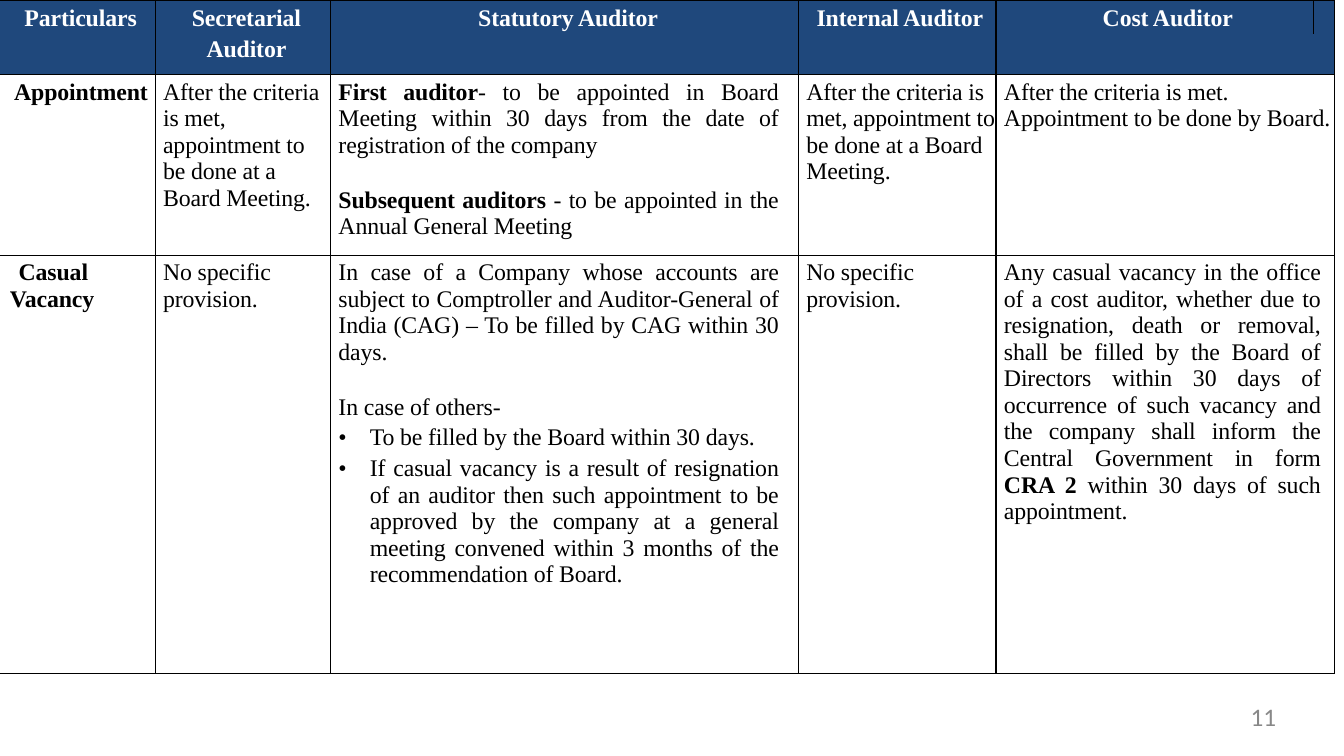
from dataclasses import dataclass
from lxml.etree import SubElement
from pptx import Presentation
from pptx.dml.color import RGBColor
from pptx.enum.text import PP_ALIGN
from pptx.oxml.ns import qn
from pptx.util import Cm, Pt

NAVY, WHITE, BLACK, GREY = "1F487C", "FFFFFF", "000000", "888888"
CENTER, JUSTIFY, LEFT = PP_ALIGN.CENTER, PP_ALIGN.JUSTIFY, PP_ALIGN.LEFT
COLUMN_WIDTHS = [3.94, 4.42, 11.79, 4.98, 8, 0.53]
ROW_HEIGHTS = [0.84, 1.02, 4.55, 10.54]
HEADER_ROWS = 2


@dataclass
class Para:
    spans: list
    align: PP_ALIGN = LEFT
    indent: float = 0.2
    right: float = 0
    before: float = 0
    line: float = 0
    bullet: bool = False


def plain(text, **layout):
    return Para([(text, False)], **layout)


def strong(text, **layout):
    return Para([(text, True)], **layout)


def heading(text, align=CENTER, indent=0.18):
    return [strong(text, align=align, indent=indent, line=20.1)]


def statutory(*spans, **layout):
    return Para(list(spans), align=JUSTIFY, right=0.5, **layout)


def bullet(text):
    return statutory((text, False), indent=0.99, before=3, bullet=True)


CELLS = {
    (0, 0): heading("Particulars"),
    (0, 1): heading("Secretarial"),
    (0, 2): heading("Statutory Auditor"),
    (0, 3): heading("Internal Auditor", LEFT, 0.46),
    (0, 4): heading("Cost Auditor", LEFT, 2.69),
    (1, 1): heading("Auditor"),
    (2, 0): [strong("Appointment", align=CENTER)],
    (2, 1): [plain("After the criteria is met, appointment to be done at a Board Meeting.")],
    (2, 2): [
        statutory(("First auditor", True),
                  ("- to be appointed in Board Meeting within 30 days from the date of "
                   "registration of the company", False)),
        statutory(("Subsequent auditors ", True),
                  ("- to be appointed in the Annual General Meeting", False), before=20.3),
    ],
    (2, 3): [plain("After the criteria is met, appointment to be done at a Board Meeting.")],
    (2, 4): [plain("After the criteria is met. Appointment to be done by Board.")],
    (3, 0): [strong("Casual", indent=0.5), strong("Vacancy", indent=0.28)],
    (3, 1): [plain("No specific"), plain("provision.")],
    (3, 2): [
        statutory(("In case of a Company whose accounts are subject to Comptroller and "
                   "Auditor-General of India (CAG) – To be filled by CAG within 30 days.", False)),
        statutory(("In case of others-", False), before=20.3),
        bullet("To be filled by the Board within 30 days."),
        bullet("If casual vacancy is a result of resignation of an auditor then such "
               "appointment to be approved by the company at a general meeting convened "
               "within 3 months of the recommendation of Board."),
    ],
    (3, 3): [plain("No specific"), plain("provision.")],
    (3, 4): [Para([
        ("Any casual vacancy in the office of a cost auditor, whether due to resignation, "
         "death or removal, shall be filled by the Board of Directors within 30 days of "
         "occurrence of such vacancy and the company shall inform the Central Government "
         "in form ", False),
        ("CRA 2 ", True),
        ("within 30 days of such appointment.", False)], align=JUSTIFY, right=0.35)],
}


def color(value):
    return RGBColor.from_string(value)


def style_span(span, font, size, value, bold=False):
    span.font.name = font
    span.font.size = Pt(size)
    span.font.bold = bold
    span.font.color.rgb = color(value)
    span.font._element.set("spc", "-10")


def clear_margins(target, top):
    target.margin_left = target.margin_right = target.margin_bottom = 0
    target.margin_top = Cm(top)


def write_paragraph(paragraph, para, value):
    paragraph.alignment = para.align
    properties = paragraph._p.get_or_add_pPr()
    properties.set("marL", str(Cm(para.indent)))
    properties.set("marR", str(Cm(para.right)))
    properties.set("indent", str(Cm(-0.79 if para.bullet else 0)))
    if para.before:
        paragraph.space_before = Pt(para.before)
    if para.line:
        paragraph.line_spacing = Pt(para.line)
    if para.bullet:
        SubElement(properties, qn("a:buFont"), typeface="Times New Roman")
        SubElement(properties, qn("a:buChar"), char="•")
        tabs = SubElement(properties, qn("a:tabLst"))
        SubElement(tabs, qn("a:tab"), pos=str(Cm(para.indent)), algn="l")
    for text, bold in para.spans:
        span = paragraph.add_run()
        span.text = text
        style_span(span, "Times New Roman", 17, value, bold)


def set_borders(cell, hidden):
    properties = cell._tc.get_or_add_tcPr()
    for side in "LRTB":
        line = SubElement(properties, qn("a:ln" + side), w=str(Pt(1)))
        if side == hidden:
            SubElement(line, qn("a:noFill"))
        else:
            fill = SubElement(line, qn("a:solidFill"))
            SubElement(fill, qn("a:srgbClr"), val=BLACK)


def add_auditor_table(page, left, top):
    frame = page.shapes.add_table(len(ROW_HEIGHTS), len(COLUMN_WIDTHS), Cm(left), Cm(top),
                                  Cm(sum(COLUMN_WIDTHS)), Cm(sum(ROW_HEIGHTS)))
    table = frame.table
    table.first_row = table.horz_banding = False
    for column, width in zip(table.columns, COLUMN_WIDTHS):
        column.width = Cm(width)
    for row, height in zip(table.rows, ROW_HEIGHTS):
        row.height = Cm(height)
    for r in range(len(ROW_HEIGHTS)):
        in_header = r < HEADER_ROWS
        for c in range(len(COLUMN_WIDTHS)):
            cell = table.cell(r, c)
            clear_margins(cell, 0 if r == 1 else 0.1)
            set_borders(cell, {0: "B", 1: "T"}.get(r))
            cell.fill.solid()
            cell.fill.fore_color.rgb = color(NAVY if in_header else WHITE)
            for i, para in enumerate(CELLS.get((r, c), [])):
                text_frame = cell.text_frame
                paragraph = text_frame.add_paragraph() if i else text_frame.paragraphs[0]
                write_paragraph(paragraph, para, WHITE if in_header else BLACK)
        if r > 0:
            table.cell(r, 4).merge(table.cell(r, 5))


def add_page_number(page, left, top, width, height):
    box = page.shapes.add_textbox(Cm(left), Cm(top), Cm(width), Cm(height))
    clear_margins(box.text_frame, 0.03)
    box.text_frame.word_wrap = True
    box.text_frame.text = "11"
    style_span(box.text_frame.paragraphs[0].runs[0], "Calibri", 18, GREY)


def main():
    deck = Presentation()
    deck.slide_width, deck.slide_height = Cm(33.87), Cm(19.05)
    page = deck.slides.add_slide(deck.slide_layouts[6])
    add_page_number(page, 31.52, 17.65, 0.71, 0.84)
    add_auditor_table(page, -0.03, 0)
    deck.save("out.pptx")


if __name__ == "__main__":
    main()
